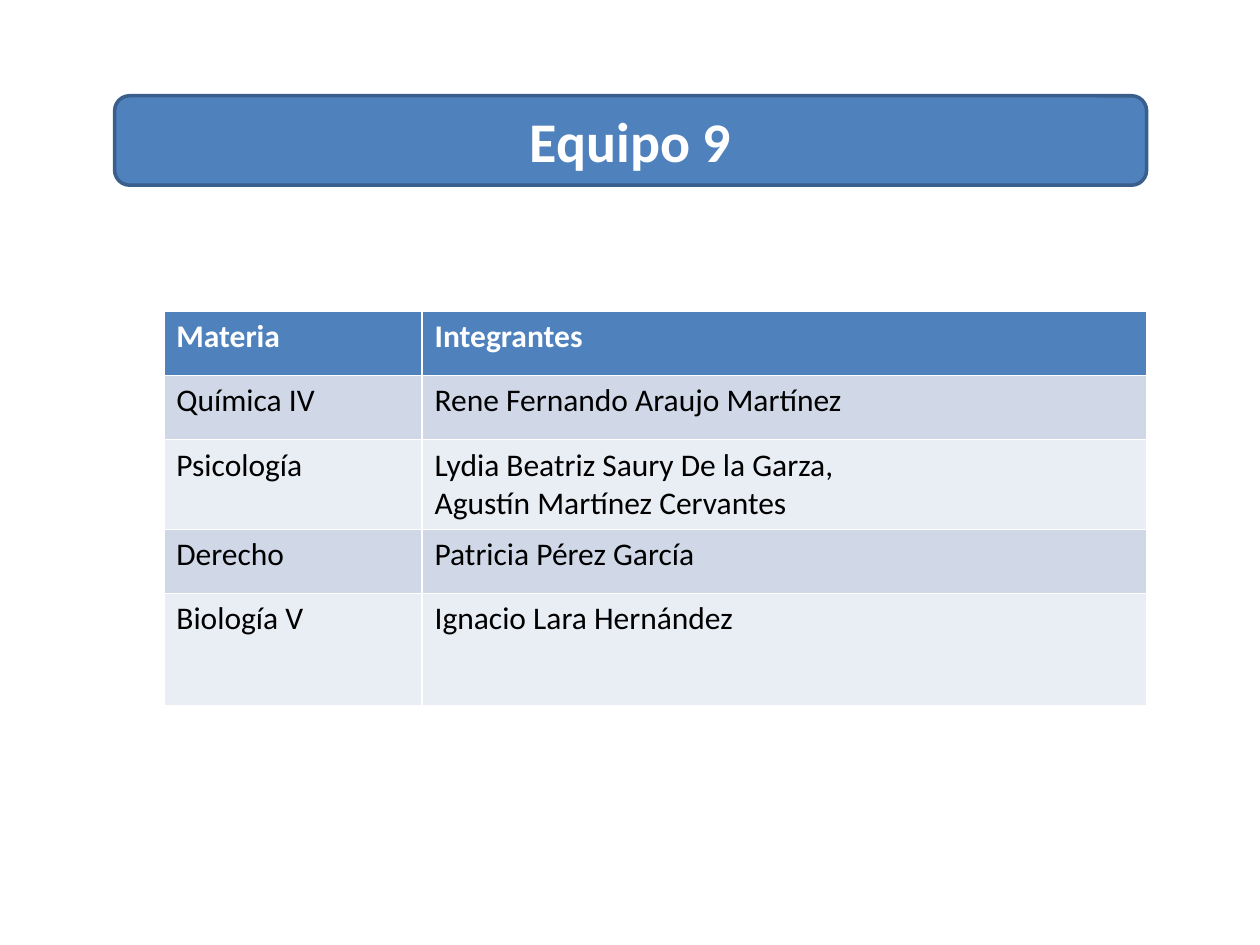
from dataclasses import dataclass

from pptx import Presentation
from pptx.dml.color import RGBColor
from pptx.enum.shapes import MSO_SHAPE
from pptx.enum.text import MSO_ANCHOR, PP_ALIGN
from pptx.util import Inches, Pt

ROUND = MSO_SHAPE.ROUNDED_RECTANGLE
MIDDLE = MSO_ANCHOR.MIDDLE
CENTER = PP_ALIGN.CENTER


@dataclass(frozen=True)
class Theme:
    font: str = "Calibri"
    blue: str = "4F81BD"
    edge: str = "3A5F8C"
    white: str = "FFFFFF"
    black: str = "000000"
    bands: tuple = ("D0D8E8", "E9EDF4")
    head: int = 32
    body: int = 18


theme = Theme()


def paint(fill, color):
    fill.solid()
    fill.fore_color.rgb = RGBColor.from_string(color)


def write(para, text, size, color, bold):
    run = para.add_run()
    run.text = text
    run.font.name = theme.font
    run.font.size = Pt(size)
    run.font.bold = bold
    run.font.color.rgb = RGBColor.from_string(color)


deck = Presentation()
deck.slide_width = Inches(10)
deck.slide_height = Inches(7.5)
slide = deck.slides.add_slide(deck.slide_layouts[5])

rows = [
    ("Materia", ["Integrantes"]),
    ("Química IV", ["Rene Fernando Araujo Martínez"]),
    ("Psicología", ["Lydia Beatriz Saury De la Garza,", "Agustín Martínez Cervantes"]),
    ("Derecho", ["Patricia Pérez García"]),
    ("Biología V", ["Ignacio Lara Hernández"]),
]
widths = [2.05, 5.75]
heights = [0.51, 0.51, 0.71, 0.51, 0.89]

table = slide.shapes.add_table(
    len(rows), len(widths), Inches(1.3), Inches(2.47),
    Inches(sum(widths)), Inches(sum(heights)),
).table
for col, width in zip(table.columns, widths):
    col.width = Inches(width)

for i, (topic, names) in enumerate(rows):
    table.rows[i].height = Inches(heights[i])
    first = i == 0
    shade = theme.blue if first else theme.bands[(i - 1) % 2]
    ink = theme.white if first else theme.black
    for j, lines in enumerate(([topic], names)):
        cell = table.cell(i, j)
        paint(cell.fill, shade)
        frame = cell.text_frame
        for k, line in enumerate(lines):
            para = frame.add_paragraph() if k else frame.paragraphs[0]
            write(para, line, theme.body, ink, first)

place = Inches(0.91), Inches(0.76), Inches(8.19), Inches(0.71)
bar = slide.shapes.add_shape(ROUND, *place)
bar.shadow.inherit = False
paint(bar.fill, theme.blue)
paint(bar.line.fill, theme.edge)
bar.line.width = Pt(2)

title = slide.shapes.title
title.left, title.top, title.width, title.height = place
slide.shapes._spTree.append(title._element)
frame = title.text_frame
frame.word_wrap = True
frame.vertical_anchor = MIDDLE
para = frame.paragraphs[0]
para.alignment = CENTER
write(para, "Equipo 9", theme.head, theme.white, True)

deck.save("out.pptx")
